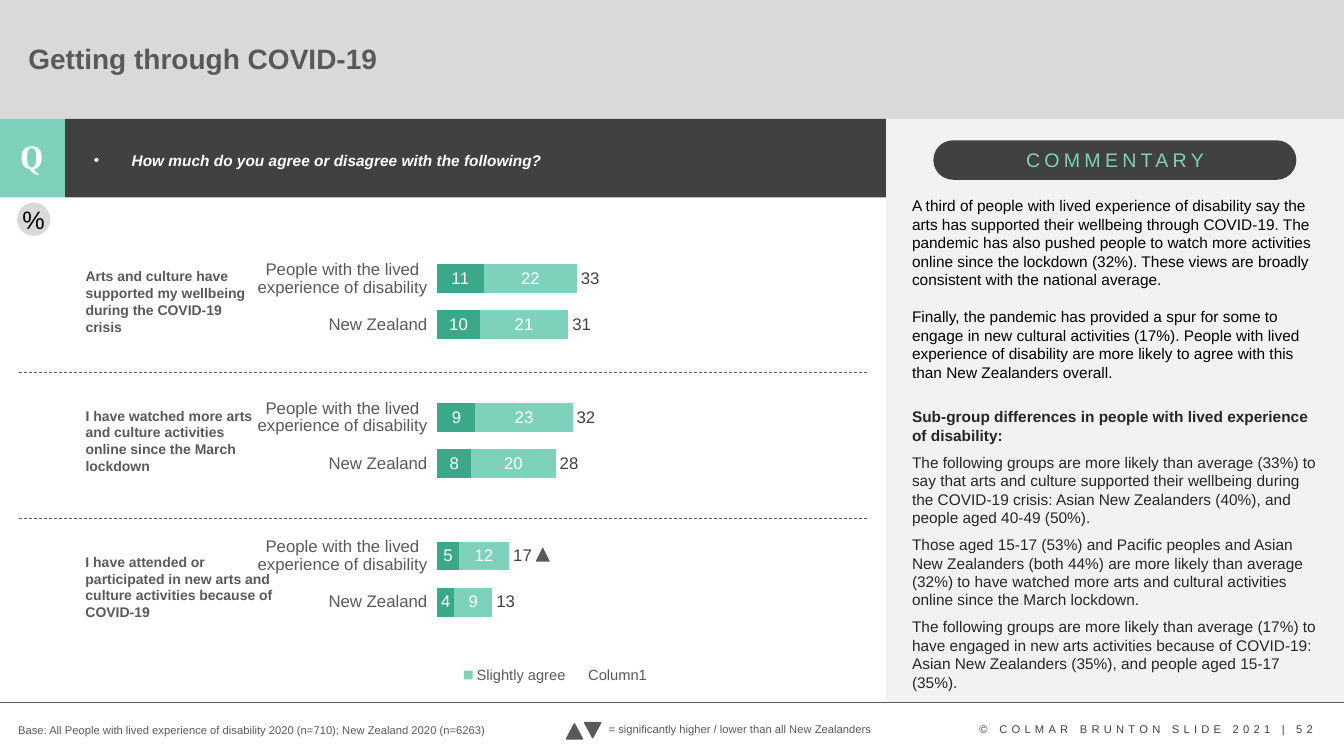
import dataclasses
import typing

import lxml.etree
import pptx
import pptx.chart.data
import pptx.dml.color
import pptx.enum.chart
import pptx.enum.dml
import pptx.enum.shapes
import pptx.enum.text
import pptx.oxml
import pptx.oxml.ns
import pptx.util

Pt = pptx.util.Pt
SHAPE = pptx.enum.shapes.MSO_SHAPE
ALIGN = pptx.enum.text.PP_ALIGN
COLOURS = {
    "banner": "D9D9D9", "panel": "F2F2F2", "dark": "414141", "mint": "7ED2BB",
    "green": "3AA889", "grey": "595959", "label": "404040", "ink": "262626",
    "black": "000000", "white": "FFFFFF",
}


class Box(typing.NamedTuple):
    left: float
    top: float
    width: float
    height: float


@dataclasses.dataclass
class Style:
    size: float
    colour: str
    bold: bool = False
    italic: bool = False
    face: str = "Arial"
    tracking: int = 0


@dataclasses.dataclass
class Para:
    text: str
    style: Style
    before: float = 0
    line: float | None = None
    align: typing.Any = None


@dataclasses.dataclass
class Block:
    shape: typing.Any
    box: Box
    fill: str
    outline: str | None = None
    rotation: float = 0


@dataclasses.dataclass
class Caption:
    box: Box
    paras: list[Para]
    wrap: bool = True


@dataclasses.dataclass
class Answer:
    name: str
    values: tuple
    fill: str | None
    label: str


def rgb(name: str) -> pptx.dml.color.RGBColor:
    return pptx.dml.color.RGBColor.from_string(COLOURS[name])


def apply_font(font, style: Style) -> None:
    font.name, font.size = style.face, Pt(style.size)
    font.bold, font.italic = style.bold, style.italic
    font.color.rgb = rgb(style.colour)


def write(frame, paras: list[Para]) -> None:
    frame.text = "\n".join(para.text for para in paras)
    for paragraph, para in zip(frame.paragraphs, paras):
        paragraph.alignment = para.align
        if para.before:
            paragraph.space_before = Pt(para.before)
        if para.line:
            paragraph.line_spacing = Pt(para.line)
        for run in paragraph.runs:
            apply_font(run.font, para.style)
            if para.style.tracking:
                run.font._element.set("spc", str(para.style.tracking * 100))


def add_block(slide, block: Block):
    shape = slide.shapes.add_shape(block.shape, *map(Pt, block.box))
    shape.shadow.inherit = False
    shape.fill.solid()
    shape.fill.fore_color.rgb = rgb(block.fill)
    if block.outline:
        shape.line.color.rgb = rgb(block.outline)
        shape.line.width = Pt(1)
    else:
        shape.line.fill.background()
    shape.rotation = block.rotation
    return shape


def add_caption(slide, caption: Caption) -> None:
    frame = slide.shapes.add_textbox(*map(Pt, caption.box)).text_frame
    frame.word_wrap = caption.wrap
    write(frame, caption.paras)


def add_rule(slide, left: float, right: float, top: float, dashed: bool) -> None:
    rule = slide.shapes.add_connector(
        pptx.enum.shapes.MSO_CONNECTOR.STRAIGHT, Pt(left), Pt(top), Pt(right), Pt(top))
    rule.line.color.rgb = rgb("grey")
    rule.line.width = Pt(0.5)
    if dashed:
        rule.line.dash_style = pptx.enum.dml.MSO_LINE.DASH
    lxml.etree.SubElement(rule.element.spPr, pptx.oxml.ns.qn("a:effectLst"))


def fill_placeholder(placeholder, box: Box, para: Para, anchor) -> None:
    """Move a placeholder to the front, place it and write one unbulleted paragraph."""
    placeholder.element.getparent().append(placeholder.element)
    placeholder.left, placeholder.top, placeholder.width, placeholder.height = map(Pt, box)
    frame = placeholder.text_frame
    frame.text = para.text
    properties = frame.paragraphs[0]._p.get_or_add_pPr()
    properties.set("marL", "0")
    properties.set("indent", "0")
    lxml.etree.SubElement(properties, pptx.oxml.ns.qn("a:buNone"))
    write(frame, [para])
    frame.paragraphs[0].line_spacing = 0.9
    frame.paragraphs[0].space_before = Pt(0)
    frame.vertical_anchor = anchor
    frame.word_wrap = True


def add_agreement_chart(slide, box: Box, categories: list[str], answers: list[Answer]) -> None:
    data = pptx.chart.data.CategoryChartData()
    data.categories = categories
    for answer in answers:
        data.add_series(answer.name, answer.values)
    chart = slide.shapes.add_chart(
        pptx.enum.chart.XL_CHART_TYPE.BAR_STACKED, *map(Pt, box), data).chart
    apply_font(chart.font, Style(10, "black"))
    chart.has_title = False

    bars = chart.plots[0]
    bars.gap_width, bars.overlap, bars.vary_by_categories = 60, 100, False
    for series, answer in zip(bars.series, answers):
        if answer.fill:
            series.format.fill.solid()
            series.format.fill.fore_color.rgb = rgb(answer.fill)
        else:
            series.format.fill.background()
            series.data_labels.position = pptx.enum.chart.XL_LABEL_POSITION.INSIDE_BASE
        series.data_labels.show_value = True
        apply_font(series.data_labels.font, Style(12, answer.label))

    chart.value_axis.minimum_scale, chart.value_axis.maximum_scale = 0, 100
    chart.value_axis.has_major_gridlines = False
    chart.value_axis.visible = False
    chart.category_axis.format.line.fill.background()
    apply_font(chart.category_axis.tick_labels.font, Style(12, "grey"))

    chart.has_legend = True
    chart.legend.position = pptx.enum.chart.XL_LEGEND_POSITION.BOTTOM
    chart.legend.include_in_layout = False
    apply_font(chart.legend.font, Style(10.5, "grey"))
    namespace = pptx.oxml.ns.nsdecls("c")
    chart.legend._element.insert(1, pptx.oxml.parse_xml(
        f'<c:legendEntry {namespace}><c:idx val="2"/><c:delete val="1"/></c:legendEntry>'))

    plot_area = chart._chartSpace.chart.plotArea
    for layout in plot_area.findall(pptx.oxml.ns.qn("c:layout")):
        plot_area.remove(layout)
    places = "".join(f'<c:{side} val="{value}"/>' for side, value in (
        ("layoutTarget", "inner"), ("xMode", "edge"), ("yMode", "edge"),
        ("x", 0.313), ("y", 0.129), ("w", 0.67), ("h", 0.746)))
    plot_area.insert(0, pptx.oxml.parse_xml(
        f"<c:layout {namespace}><c:manualLayout>{places}</c:manualLayout></c:layout>"))


STATEMENT = Style(10, "grey", bold=True)
NOTE = Style(8, "grey")
LEAD = Style(11, "black")
DETAIL = Style(11, "ink")
GROUPS = ["New Zealand", "People with the lived experience of disability"]
BLOCKS = [
    Block(SHAPE.RECTANGLE, Box(0, 0, 960, 85), "banner"),
    Block(SHAPE.RECTANGLE, Box(632.8, 85, 327.2, 416.8), "panel"),
    Block(SHAPE.RECTANGLE, Box(46.2, 85, 586.6, 56), "dark"),
    Block(SHAPE.RECTANGLE, Box(0, 85, 46.4, 56), "mint"),
    Block(SHAPE.ROUNDED_RECTANGLE, Box(666.7, 100.2, 259.3, 28.2), "dark"),
    Block(SHAPE.ISOSCELES_TRIANGLE, Box(404.6, 517, 11.5, 10.8), "grey", "grey"),
    Block(SHAPE.ISOSCELES_TRIANGLE, Box(417.6, 516.2, 11.5, 10.8), "grey", "grey", 180),
]
CAPTIONS = [
    Caption(Box(692.6, 512.6, 260, 17.3), [
        Para("© COLMAR BRUNTON SLIDE 2021 | 52", Style(8, "label", tracking=3))]),
    Caption(Box(5.8, 93.6, 33.8, 36), [
        Para("Q", Style(24, "white", bold=True, face="Cambria"), align=ALIGN.CENTER)]),
    Caption(Box(725.8, 102.2, 145.4, 24.5), [
        Para("COMMENTARY", Style(14, "mint", tracking=3))], wrap=False),
    Caption(Box(54, 391.7, 149, 55.4), [Para(
        "I have attended or participated in new arts and culture activities because of COVID-19",
        STATEMENT, line=12)]),
    Caption(Box(54, 187.9, 138.2, 55.4), [Para(
        "Arts and culture have supported my wellbeing during the COVID-19 crisis",
        STATEMENT, line=12)]),
    Caption(Box(54, 287.3, 138.2, 55.4), [Para(
        "I have watched more arts and culture activities online since the March lockdown",
        STATEMENT, line=12)]),
    Caption(Box(644.4, 136.8, 309.6, 362), [
        Para("A third of people with lived experience of disability say the arts has supported their wellbeing through COVID-19. The pandemic has also pushed people to watch more activities online since the lockdown (32%). These views are broadly consistent with the national average.", LEAD, line=13.2),
        Para("Finally, the pandemic has provided a spur for some to engage in new cultural activities (17%). People with lived experience of disability are more likely to agree with this than New Zealanders overall.", LEAD, 13.2, 13.2),
        Para("Sub-group differences in people with lived experience of disability:", Style(11, "ink", bold=True), 18.5, 13.2),
        Para("The following groups are more likely than average (33%) to say that arts and culture supported their wellbeing during the COVID-19 crisis: Asian New Zealanders (40%), and people aged 40-49 (50%).", DETAIL, 6, 13.2),
        Para("Those aged 15-17 (53%) and Pacific peoples and Asian New Zealanders (both 44%) are more likely than average (32%) to have watched more arts and cultural activities online since the March lockdown.", DETAIL, 6, 13.2),
        Para("The following groups are more likely than average (17%) to have engaged in new arts activities because of COVID-19: Asian New Zealanders (35%), and people aged 15-17 (35%).", DETAIL, 6, 13.2),
    ]),
    Caption(Box(5.8, 513.4, 351.4, 17.3), [Para(
        "Base: All People with lived experience of disability 2020 (n=710); New Zealand 2020 (n=6263)", NOTE)]),
    Caption(Box(427.7, 512.6, 204.5, 17.3), [Para(
        "= significantly higher / lower than all New Zealanders", NOTE)], wrap=False),
]
ANSWERS = [
    Answer("Strongly agree", (4, 5, None, 8, 9, None, 10, 11), "green", "white"),
    Answer("Slightly agree", (9, 12, None, 20, 23, None, 21, 22), "mint", "white"),
    Answer("Column1", (13, 17, None, 28, 32, None, 31, 33), None, "label"),
]


def main() -> None:
    deck = pptx.Presentation()
    deck.slide_width, deck.slide_height = Pt(960), Pt(540)
    slide = deck.slides.add_slide(deck.slide_layouts[1])
    blocks = [add_block(slide, block) for block in BLOCKS]
    blocks[4].adjustments[0] = 0.5
    anchors = pptx.enum.text.MSO_ANCHOR
    fill_placeholder(slide.shapes.title, Box(13, 15.1, 805.7, 56.2),
                     Para("Getting through COVID-19", Style(20, "grey", bold=True), align=ALIGN.LEFT),
                     anchors.MIDDLE)
    fill_placeholder(slide.placeholders[1], Box(59.8, 105.8, 547.2, 33.1),
                     Para("How much do you agree or disagree with the following?",
                          Style(11, "white", bold=True, italic=True)), anchors.TOP)
    add_agreement_chart(slide, Box(171.4, 136.8, 450.7, 354.2),
                        (GROUPS + [""]) * 2 + GROUPS, ANSWERS)
    for caption in CAPTIONS:
        add_caption(slide, caption)

    unit = add_block(slide, Block(SHAPE.OVAL, Box(12.2, 144.7, 23.8, 23.8), "banner")).text_frame
    unit.margin_left = unit.margin_top = unit.margin_right = unit.margin_bottom = 0
    unit.vertical_anchor = anchors.MIDDLE
    unit.word_wrap = False
    write(unit, [Para("%", Style(18, "black"), align=ALIGN.CENTER)])

    add_rule(slide, 0, 960, 501.8, dashed=False)
    for top in (265.7, 370.1):
        add_rule(slide, 13.7, 619.2, top, dashed=True)
    add_block(slide, Block(SHAPE.ISOSCELES_TRIANGLE, Box(381.6, 389.5, 12.2, 12.2), "grey", "white"))
    deck.save("out.pptx")


if __name__ == "__main__":
    main()
